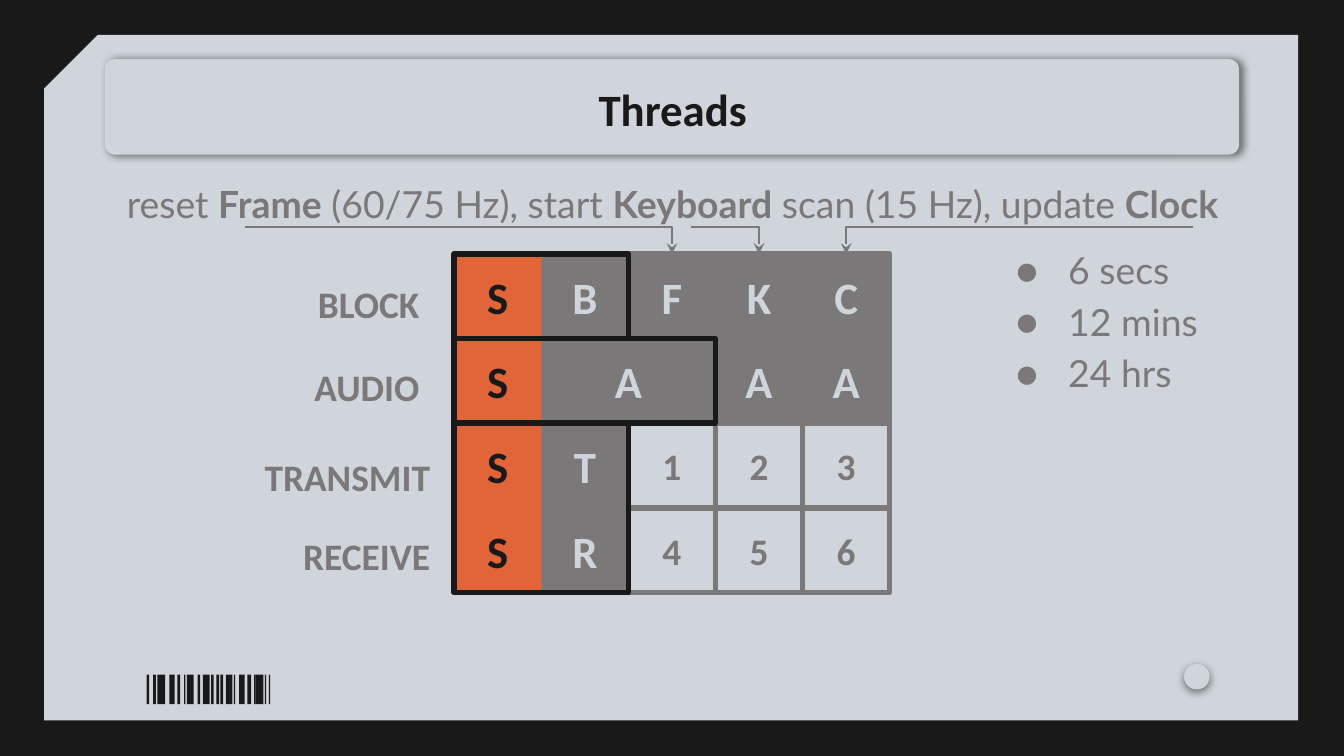
"""Builds the Threads slide: a timing grid with row labels and callouts."""
from lxml import etree
from pptx import Presentation, util as u
from pptx.dml.color import RGBColor
from pptx.enum import shapes, text
from pptx.oxml import parse_xml
from pptx.oxml.ns import nsdecls, qn

INK, PAPER, GREY, ORANGE = "191919", "D0D5DB", "7A7879", "E16539"
SHAPE, ALIGN = shapes.MSO_SHAPE, text.PP_ALIGN


def add_box(kind, box, fill=None, line=None):
    sp = s.shapes.add_shape(kind, *[u.Inches(v) for v in box])
    sp.shadow.inherit = False
    if fill:
        sp.fill.solid()
        sp.fill.fore_color.rgb = RGBColor.from_string(fill)
    else:
        sp.fill.background()
    if line:
        sp.line.color.rgb = RGBColor.from_string(line)
        sp.line.width = u.Pt(3)
        etree.SubElement(sp.line._get_or_add_ln(), qn("a:round"))
    else:
        sp.line.fill.background()
    return sp


def write(p, runs, align, font, size, color, spacing=None, after=None):
    p.alignment, p.line_spacing = align, spacing
    p.space_before = u.Pt(0)
    if after:
        p.space_after = u.Pt(after)
    for words, bold in runs:
        r = p.add_run()
        r.text = words
        r.font.name, r.font.size, r.font.bold = font, u.Pt(size), bold
        r.font.color.rgb = RGBColor.from_string(color)
    tf = p._parent
    tf.word_wrap = True
    tf.margin_left = tf.margin_right = tf.margin_top = tf.margin_bottom = u.Inches(0.1)


prs = Presentation()
prs.slide_width, prs.slide_height = u.Inches(10), u.Inches(10 * 9 / 16)
s = prs.slides.add_slide(prs.slide_layouts[5])
s.background.fill.solid()
s.background.fill.fore_color.rgb = RGBColor.from_string(INK)

panel = add_box(SHAPE.SNIP_1_RECTANGLE, (0.33, 0.26, 9.33, 5.1), PAPER)
panel.adjustments[0] = 0.078
panel._element.spPr.find(qn("a:xfrm")).set("flipH", "1")
banner = add_box(SHAPE.ROUNDED_RECTANGLE, (0.78, 0.44, 8.44, 0.71), PAPER)
banner.adjustments[0] = 0.106
dot = add_box(SHAPE.OVAL, (8.81, 4.94, 0.19, 0.19), PAPER)
for sp, angle in ((banner, 6), (dot, 90)):
    sp._element.spPr.find(qn("a:effectLst")).append(parse_xml(
        f'<a:outerShdw {nsdecls("a")} blurRad="{u.Pt(4.5)}" dist="{u.Pt(1.5)}" '
        f'dir="{angle * 60000}" algn="bl" rotWithShape="0"><a:srgbClr val="000000">'
        '<a:alpha val="50000"/></a:srgbClr></a:outerShdw>'))

bars = [(1.09, 0.02), (1.14, 0.02), (1.17, 0.05), (1.22, 0.01), (1.26, 0.04), (1.32, 0.02),
        (1.37, 0.01), (1.39, 0.05), (1.47, 0.02), (1.51, 0.05), (1.57, 0.02), (1.61, 0.02),
        (1.64, 0.02), (1.68, 0.05), (1.74, 0.01), (1.78, 0.04), (1.84, 0.03), (1.89, 0.01),
        (1.9, 0.06), (1.97, 0.01), (2, 0.01)]
for x, width in bars:
    add_box(SHAPE.RECTANGLE, (x, 5.02, width, 0.22), INK)

title = s.shapes.title
title.left, title.top, title.width, title.height = [u.Inches(v) for v in (0.79, 0.49, 8.43, 0.63)]
title.text_frame.auto_size = text.MSO_AUTO_SIZE.NONE
title.text_frame.vertical_anchor = text.MSO_ANCHOR.MIDDLE
write(title.text_frame.paragraphs[0], [("Threads", True)], ALIGN.CENTER, "Calibri", 24, INK)
s.shapes._spTree.append(title._element)

left, top, cell_w, cell_h = 3.38, 1.89, 3.24 / 5, 0.63
grid = [[("B", 1), ("F", 1), ("K", 1), ("C", 1)],
        [("A", 2), ("A", 1), ("A", 1)],
        [("T", 1), ("1", 1), ("2", 1), ("3", 1)],
        [("R", 1), ("4", 1), ("5", 1), ("6", 1)]]
cells = []
for row, entries in enumerate(grid):
    col = 1
    for label, span in entries:
        style = (None, GREY, 20, GREY) if label.isdigit() else (GREY, GREY, 24, PAPER)
        cells.append((label, row, col, span, *style))
        col += span
cells.sort(key=lambda cell: not cell[0].isdigit())
cells += [("S", row, 0, 1, ORANGE, None, 24, INK) for row in range(len(grid))]
for label, row, col, span, fill, line, size, color in cells:
    box = (left + col * cell_w, top + row * cell_h, span * cell_w, cell_h)
    sp = add_box(SHAPE.RECTANGLE, box, fill, line)
    sp.text_frame.vertical_anchor = text.MSO_ANCHOR.MIDDLE
    write(sp.text_frame.paragraphs[0], [(label, True)], ALIGN.CENTER, "Calibri", size, color)

for row, cols, rows in ((0, 2, 1), (2, 2, 2), (1, 3, 1)):
    add_box(SHAPE.RECTANGLE, (left, top + row * cell_h, cols * cell_w, rows * cell_h), None, INK)

caption = [("reset ", False), ("Frame", True), (" (60/75 Hz), start ", False),
           ("Keyboard", True), (" scan (15 Hz), update ", False), ("Clock", True)]
labels = [((0.79, 1.2, 8.43, 0.54), caption, ALIGN.CENTER, "Lato"),
          ((0.91, 1.94, 2.31, 0.54), [("BLOCK", True)], ALIGN.RIGHT, "Calibri"),
          ((0.91, 2.56, 2.31, 0.54), [("AUDIO", True)], ALIGN.RIGHT, "Calibri"),
          ((0.82, 3.23, 2.48, 0.54), [("TRANSMIT", True)], ALIGN.RIGHT, "Calibri"),
          ((0.82, 3.82, 2.48, 0.54), [("RECEIVE", True)], ALIGN.RIGHT, "Calibri")]
for box, runs, align, font in labels:
    tb = s.shapes.add_textbox(*[u.Inches(v) for v in box])
    write(tb.text_frame.paragraphs[0], runs, align, font, 20, GREY, 1.15, 16)

for col, start_x in ((2, 1.82), (3, 5.14), (4, 8.88)):
    end_x = left + (col + 0.5) * cell_w
    cxn = s.shapes.add_connector(shapes.MSO_CONNECTOR.ELBOW, u.Inches(start_x), u.Inches(1.69),
                                 u.Inches(end_x), u.Inches(top))
    cxn.line.color.rgb = RGBColor.from_string(GREY)
    cxn.line.width = u.Pt(0.75)
    etree.SubElement(cxn.line._get_or_add_ln(), qn("a:tailEnd"), type="stealth")
    spPr = cxn._element.spPr
    spPr.find(qn("a:prstGeom")).set("prst", "bentConnector2")
    etree.SubElement(spPr, qn("a:effectLst"))

tb = s.shapes.add_textbox(*[u.Inches(v) for v in (7.35, 1.69, 1.86, 1.31)])
for i, period in enumerate(("6 secs", "12 mins", "24 hrs")):
    p = tb.text_frame.add_paragraph() if i else tb.text_frame.paragraphs[0]
    pPr = p._p.get_or_add_pPr()
    pPr.set("marL", str(u.Inches(0.5)))
    pPr.set("indent", str(u.Inches(-0.39)))
    clr = etree.SubElement(pPr, qn("a:buClr"))
    etree.SubElement(clr, qn("a:srgbClr"), val=GREY)
    etree.SubElement(pPr, qn("a:buFont"), typeface="Lato")
    etree.SubElement(pPr, qn("a:buChar"), char="●")
    write(p, [(period, False)], ALIGN.LEFT, "Lato", 20, GREY, 1.15)

prs.save("out.pptx")
